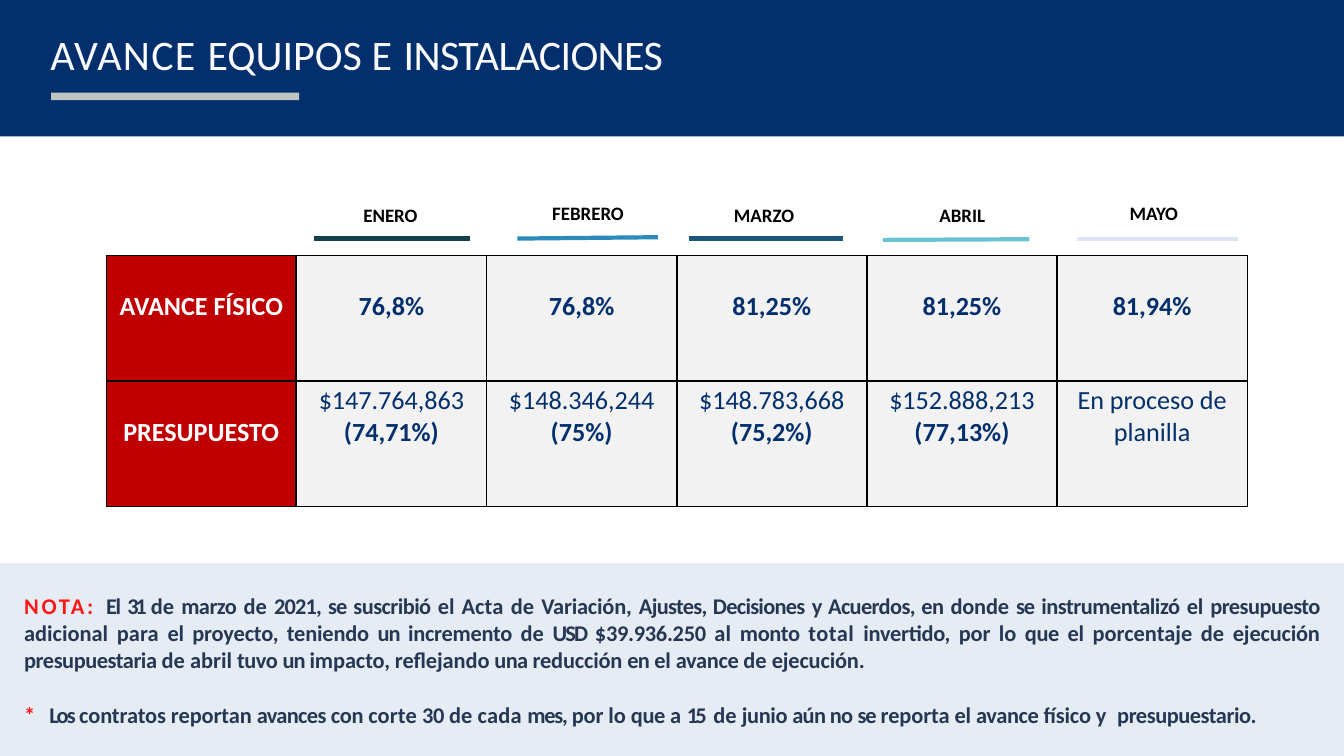
from dataclasses import dataclass

from lxml import etree
from pptx import Presentation
from pptx.dml.color import RGBColor
from pptx.enum.shapes import MSO_CONNECTOR, MSO_SHAPE
from pptx.enum.text import MSO_ANCHOR, MSO_AUTO_SIZE, PP_ALIGN
from pptx.oxml.ns import qn
from pptx.util import Pt

PX = 9144
RECTANGLE = MSO_SHAPE.RECTANGLE
STRAIGHT = MSO_CONNECTOR.STRAIGHT
TOP = MSO_ANCHOR.TOP
FIXED_SIZE = MSO_AUTO_SIZE.NONE
LEFT, CENTER, JUSTIFY = PP_ALIGN.LEFT, PP_ALIGN.CENTER, PP_ALIGN.JUSTIFY
TITLE_ONLY = 5


@dataclass(frozen=True)
class Theme:
    font: str = "Calibri"
    navy: str = "032F6D"
    accent: str = "BEC6BF"
    note_fill: str = "8AABCA"
    note_text: str = "263754"
    alert: str = "FF1616"
    title_text: str = "F9FBFF"
    header: str = "C00000"
    cell: str = "F2F2F2"
    white: str = "FFFFFF"
    black: str = "000000"
    title_size: float = 45
    note_size: float = 24
    table_size: float = 28
    month_size: float = 20.3


THEME = Theme()

TITLE = [("AVANCE ", 1.4), ("EQUIPOS ", 0), ("E ", 1.1), ("INSTALACIONES", -0.7)]

MONTHS = [
    ("ENERO", (484, 289, 194, 49), (468, 355, 700, 355), "16414A"),
    ("FEBRERO", (791, 287, 168, 49), (770, 355, 979, 353), "2B8BBB"),
    ("MARZO", (1050, 289, 174, 49), (1025, 355, 1255, 355), "1B5877"),
    ("ABRIL", (1361, 289, 142, 49), (1314, 357, 1532, 356), "6BC2D3"),
    ("MAYO", (1633, 286, 168, 49), (1603, 356, 1842, 356), "DCE6F2"),
]

PROGRESS = ["76,8%", "76,8%", "81,25%", "81,25%", "81,94%"]
BUDGET = [
    ("$147.764,863", "(74,71%)"),
    ("$148.346,244", "(75%)"),
    ("$148.783,668", "(75,2%)"),
    ("$152.888,213", "(77,13%)"),
    ("En proceso de planilla",),
]

NOTE = [
    ("El ", -1.3), ("31 ", -3.4), ("de ", 0), ("marzo ", -0.6), ("de ", 0),
    ("2021, ", -0.9), ("se ", -1.2), ("suscribió ", -0.6), ("el ", -0.2),
    ("Acta ", 0.1), ("de ", 0), ("Variación, ", -0.2),
    ("Ajustes, Decisiones ", -0.8), ("y ", -1.6), ("Acuerdos, en ", -0.7),
    ("donde ", -0.2), ("se ", -1.2), ("instrumentalizó ", -0.5), ("el ", -0.2),
    ("presupuesto ", -0.6), ("adicional ", 0), ("para ", 0.1),
    ("el proyecto, teniendo ", -0.2), ("un ", -1.1), ("incremento ", -0.3),
    ("de ", 0), ("USD ", -2), ("$39.936.250 ", -0.3), ("al ", 0.1),
    ("monto ", -0.4), ("total ", 0.5), ("invertido, ", -0.3), ("por lo ", -0.1),
    ("que ", -0.4), ("el ", -0.2), ("porcentaje de ", 0), ("ejecución ", -0.2),
    ("presupuestaria ", -0.5), ("de abril ", 0), ("tuvo ", -0.5), ("un ", -1.1),
    ("impacto, reflejando ", -0.1), ("una ", -0.7), ("reducción ", -0.2),
    ("en ", -0.7), ("el ", -0.2), ("avance ", -0.4), ("de ", 0),
    ("ejecución.", -0.2),
]
FOOTNOTE = [
    ("Los ", -1.9), ("contratos reportan ", -0.1), ("avances ", -0.7),
    ("con ", -0.3), ("corte ", 0.1), ("30 ", -0.4), ("de ", 0), ("cada ", 0.3),
    ("mes, ", -1.3), ("por lo ", -0.1), ("que ", -0.4), ("a ", 0.3),
    ("15", -3), (" ", 1.8), ("de ", 0), ("junio ", -0.4), ("aún no ", -0.7),
    ("se ", -1.2), ("reporta ", -0.1), ("el ", -0.2), ("avance ", -0.4),
    ("físico ", -0.2), ("y", -1.6), (" ", 6), ("presupuestario.", -0.5),
]


def px(*lengths):
    return [length * PX for length in lengths]


def rgb(color):
    return RGBColor.from_string(color)


def add_span(para, text, size, color, bold=False, spacing=0):
    span = para.add_run()
    span.text = text
    font = span.font
    font.name, font.size, font.bold = THEME.font, Pt(size), bold
    font.color.rgb = rgb(color)
    if spacing:
        font._element.set("spc", str(round(spacing * 100)))


def add_spans(para, spans, size, color, bold=False):
    for text, spacing in spans:
        add_span(para, text, size, color, bold, spacing)


def set_frame(frame, margins):
    frame.word_wrap = True
    frame.auto_size = FIXED_SIZE
    frame.vertical_anchor = TOP
    (frame.margin_left, frame.margin_top,
     frame.margin_right, frame.margin_bottom) = px(*margins)


def add_box(page, place, margins):
    frame = page.shapes.add_textbox(*px(*place)).text_frame
    set_frame(frame, margins)
    return frame


def add_band(page, place, color, opacity=100):
    band = page.shapes.add_shape(RECTANGLE, *px(*place))
    band.shadow.inherit = False
    band.line.fill.background()
    band.fill.solid()
    band.fill.fore_color.rgb = rgb(color)
    if opacity < 100:
        tint = band._element.spPr.find(".//" + qn("a:srgbClr"))
        etree.SubElement(tint, qn("a:alpha")).set("val", str(opacity * 1000))


def add_title(page):
    title = page.shapes.title
    title.left, title.top, title.width, title.height = px(75, 41, 1164, 77)
    set_frame(title.text_frame, (0, 1, 0, 0))
    para = title.text_frame.paragraphs[0]
    para.alignment = LEFT
    para.space_before = Pt(1)
    add_spans(para, TITLE, THEME.title_size, THEME.title_text)
    page.shapes._spTree.append(title._element)


def add_note(page):
    frame = add_box(page, (36, 880, 1928, 203), (0, 1, 0, 0))
    rows = [("NOTA: ", 2.9, NOTE, 1), ("* ", 4.8, FOOTNOTE, 30)]
    for index, (mark, spacing, spans, gap) in enumerate(rows):
        para = frame.add_paragraph() if index else frame.paragraphs[0]
        para.alignment = LEFT if index else JUSTIFY
        para.space_before = Pt(gap)
        add_span(para, mark, THEME.note_size, THEME.alert, True, spacing)
        add_spans(para, spans, THEME.note_size, THEME.note_text, True)


def add_month(page, name, place, rule, color):
    line = page.shapes.add_connector(STRAIGHT, *px(*rule))
    line.line.color.rgb = rgb(color)
    line.line.width = Pt(4.5)
    etree.SubElement(line._element.spPr, qn("a:effectLst"))
    para = add_box(page, place, (10, 5, 10, 5)).paragraphs[0]
    para.alignment = CENTER
    para.line_spacing = Pt(30.5)
    add_span(para, name, THEME.month_size, THEME.black, True)


def set_borders(cell, outer_sides):
    properties = cell._tc.get_or_add_tcPr()
    for side in "LRTB":
        width = Pt(1 if side in outer_sides else 2.25)
        border = etree.SubElement(properties, qn("a:ln" + side), w=str(width))
        fill = etree.SubElement(border, qn("a:solidFill"))
        etree.SubElement(fill, qn("a:srgbClr"), val=THEME.black)


def fill_cell(cell, lines, fill, color, top_margin):
    cell.fill.solid()
    cell.fill.fore_color.rgb = rgb(fill)
    cell.margin_top = top_margin * PX
    cell.vertical_anchor = TOP
    for index, (text, bold) in enumerate(lines):
        para = cell.text_frame.add_paragraph() if index else cell.text_frame.paragraphs[0]
        para.alignment = CENTER
        add_span(para, text, THEME.table_size, color, bold)


def add_progress_table(page):
    progress = [[(value, True)] for value in ["AVANCE FÍSICO"] + PROGRESS]
    budget = [[("PRESUPUESTO", True)]]
    budget += [list(zip(values, (False, True))) for values in BUDGET]
    columns = len(progress)
    table = page.shapes.add_table(2, columns, *px(158, 380, 1698, 374)).table
    table.first_row = table.horz_banding = False
    for row, contents in enumerate((progress, budget)):
        for column, lines in enumerate(contents):
            cell = table.cell(row, column)
            sides = "B" if row else "T"
            sides += {0: "L", columns - 1: "R"}.get(column, "")
            set_borders(cell, sides)
            heading = column == 0
            fill_cell(cell, lines,
                      THEME.header if heading else THEME.cell,
                      THEME.white if heading else THEME.navy,
                      53 if heading or row == 0 else 5)


def main():
    deck = Presentation()
    deck.slide_width, deck.slide_height = px(2000, 1125)
    page = deck.slides.add_slide(deck.slide_layouts[TITLE_ONLY])
    add_band(page, (0, 0, 2000, 203), THEME.navy)
    add_band(page, (76, 138, 369, 11), THEME.accent)
    add_band(page, (0, 838, 2000, 287), THEME.note_fill, 22)
    add_note(page)
    add_title(page)
    add_progress_table(page)
    for month in MONTHS:
        add_month(page, *month)
    deck.save("out.pptx")


if __name__ == "__main__":
    main()
